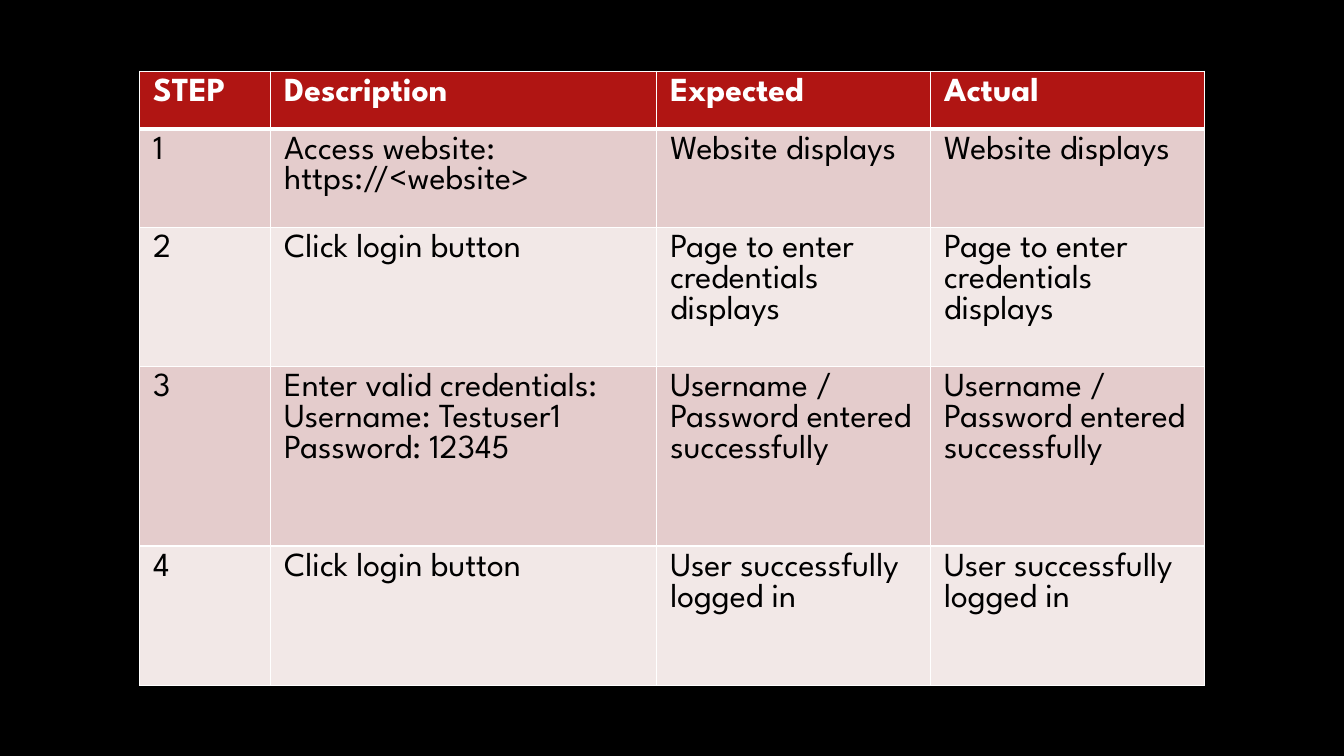
from lxml.etree import SubElement
from pptx import Presentation
from pptx.dml.color import RGBColor
from pptx.enum.shapes import MSO_SHAPE
from pptx.oxml.ns import qn
from pptx.util import Pt

BLACK = RGBColor(0x00, 0x00, 0x00)
WHITE = RGBColor(0xFF, 0xFF, 0xFF)
RED = RGBColor(0xB0, 0x15, 0x13)
ROSE = RGBColor(0xE4, 0xCC, 0xCC)
PALE_ROSE = RGBColor(0xF2, 0xE8, 0xE7)

SLIDE_WIDTH, SLIDE_HEIGHT = 960, 540
HEADERS = ["STEP", "Description", "Expected", "Actual"]
STEPS = [
    ("Access website: https://<website>", "Website displays"),
    ("Click login button", "Page to enter credentials displays"),
    (
        "Enter valid credentials:\nUsername: Testuser1\nPassword: 12345",
        "Username / Password entered successfully",
    ),
    ("Click login button", "User successfully logged in"),
]
COLUMN_WIDTHS = [93.6, 275.8, 195.6, 195.6]
ROW_HEIGHTS = [41.1, 70.5, 99.4, 128.2, 99.4]
CELL_MARGINS = {
    "margin_left": Pt(9.6),
    "margin_right": Pt(9.6),
    "margin_top": Pt(4.8),
    "margin_bottom": Pt(4.8),
}


def add_backdrop(slide, left, top, width, height):
    slide.background.fill.solid()
    slide.background.fill.fore_color.rgb = BLACK
    backdrop = slide.shapes.add_shape(
        MSO_SHAPE.RECTANGLE, Pt(left), Pt(top), Pt(width), Pt(height)
    )
    backdrop.shadow.inherit = False
    backdrop.fill.solid()
    backdrop.fill.fore_color.rgb = BLACK
    backdrop.line.fill.background()


def set_borders(cell, widths):
    properties = cell._tc.get_or_add_tcPr()
    for side, width in widths.items():
        line = SubElement(properties, qn(f"a:ln{side}"), w=str(Pt(width)))
        fill = SubElement(line, qn("a:solidFill"))
        SubElement(fill, qn("a:srgbClr"), val=str(WHITE))


def fill_cell(cell, text, background, font_format, border_widths):
    set_borders(cell, border_widths)
    cell.fill.solid()
    cell.fill.fore_color.rgb = background
    for name, value in CELL_MARGINS.items():
        setattr(cell, name, value)
    cell.text_frame.text = text
    for paragraph in cell.text_frame.paragraphs:
        font = paragraph.runs[0].font
        font.color.rgb = font_format["color"]
        for name in ("name", "size", "bold"):
            setattr(font, name, font_format[name])


def add_test_steps(slide, left, top):
    rows = [HEADERS] + [
        (str(number), description, result, result)
        for number, (description, result) in enumerate(STEPS, 1)
    ]
    frame = slide.shapes.add_table(
        len(rows), len(HEADERS), Pt(left), Pt(top),
        Pt(sum(COLUMN_WIDTHS)), Pt(sum(ROW_HEIGHTS)),
    )
    table = frame.table
    for column, width in zip(table.columns, COLUMN_WIDTHS):
        column.width = Pt(width)
    for row, height in zip(table.rows, ROW_HEIGHTS):
        row.height = Pt(height)
    for row_index, texts in enumerate(rows):
        is_header = row_index == 0
        background = RED if is_header else (PALE_ROSE, ROSE)[row_index % 2]
        font_format = {
            "name": "League Spartan",
            "size": Pt(24),
            "bold": is_header,
            "color": WHITE if is_header else BLACK,
        }
        border_widths = {
            "L": 1,
            "R": 1,
            "T": 3 if row_index == 1 else 1,
            "B": 3 if is_header else 1,
        }
        for column_index, text in enumerate(texts):
            cell = table.cell(row_index, column_index)
            fill_cell(cell, text, background, font_format, border_widths)


def main():
    presentation = Presentation()
    presentation.slide_width = Pt(SLIDE_WIDTH)
    presentation.slide_height = Pt(SLIDE_HEIGHT)
    slide = presentation.slides.add_slide(presentation.slide_layouts[6])
    add_backdrop(slide, 0, 0, SLIDE_WIDTH, SLIDE_HEIGHT)
    add_test_steps(slide, 99.8, 50.9)
    presentation.save("out.pptx")


if __name__ == "__main__":
    main()
